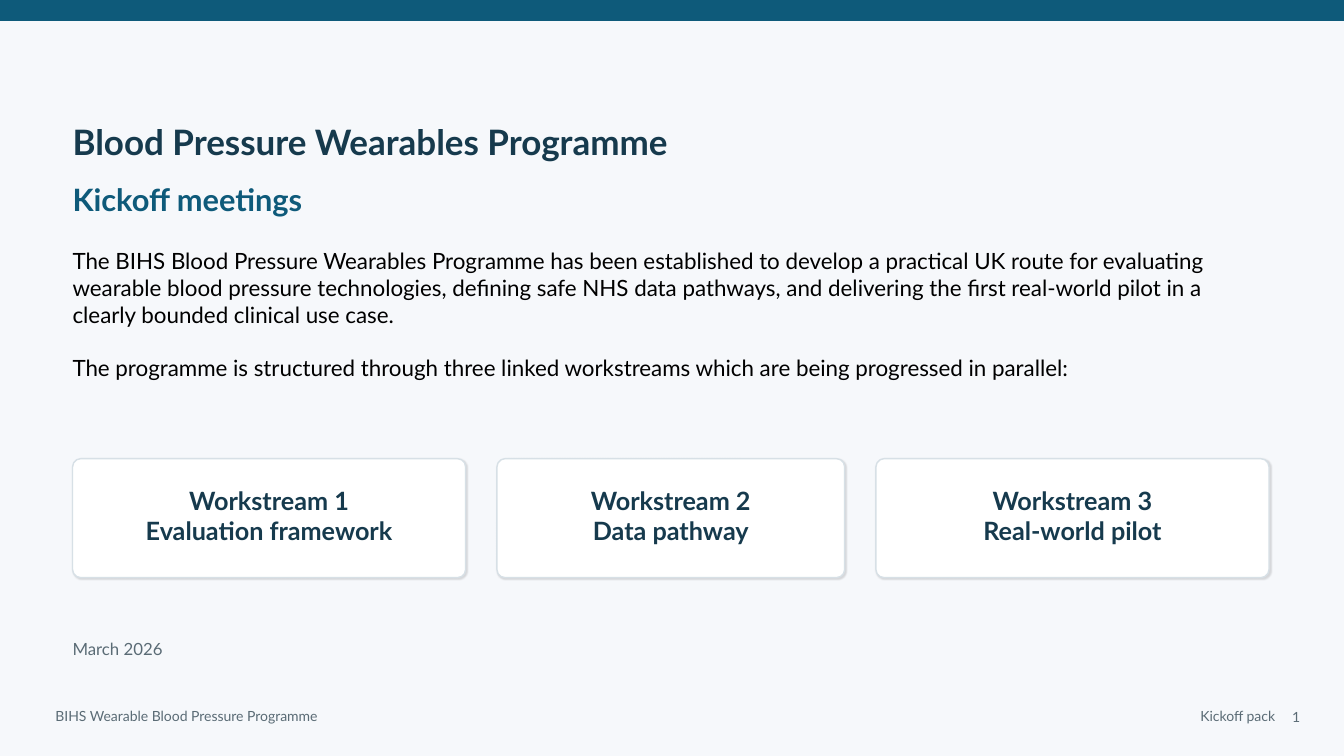
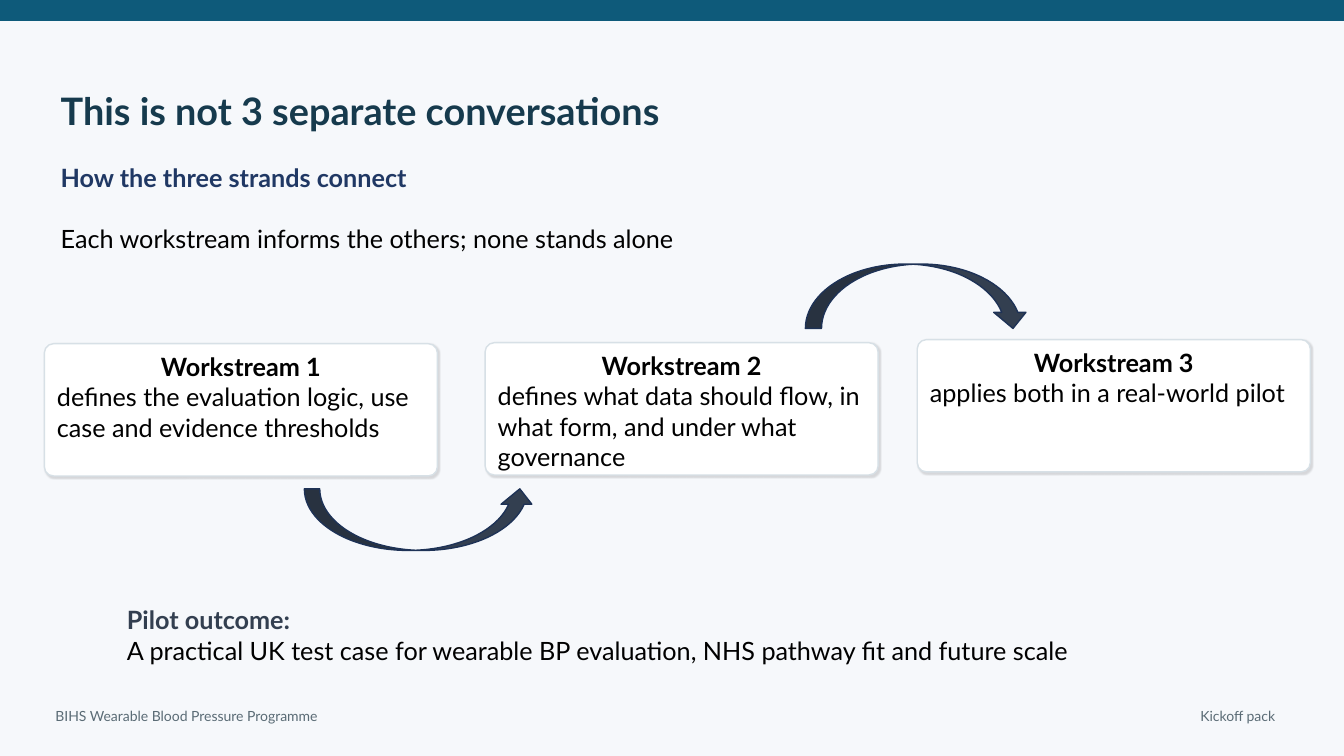
from dataclasses import dataclass

from lxml.etree import SubElement
from pptx import Presentation
from pptx.dml.color import RGBColor
from pptx.enum.shapes import MSO_SHAPE
from pptx.enum.text import MSO_ANCHOR, PP_ALIGN
from pptx.oxml.ns import qn
from pptx.shapes.autoshape import Shape
from pptx.slide import Slide
from pptx.text.text import TextFrame
from pptx.util import Pt

FONT = "Lato"
PAPER = RGBColor(0xF6, 0xF8, 0xFB)
TEAL = RGBColor(0x0E, 0x5A, 0x7A)
NAVY = RGBColor(0x16, 0x3A, 0x4D)
BLUE = RGBColor(0x20, 0x38, 0x64)
SLATE = RGBColor(0x33, 0x3F, 0x50)
EDGE = RGBColor(0x1E, 0x32, 0x56)
GREY = RGBColor(0x5A, 0x6B, 0x75)
RULE = RGBColor(0xD7, 0xE0, 0xE6)
WHITE = RGBColor(0xFF, 0xFF, 0xFF)
BLACK = RGBColor(0, 0, 0)


@dataclass(frozen=True)
class Box:
    x: float
    y: float
    w: float
    h: float


@dataclass(frozen=True)
class Card:
    box: Box
    title: str
    body: str


def write(frame: TextFrame, text: str, *, size: float = 18,
          color: RGBColor = BLACK, bold: bool = False,
          align: PP_ALIGN = PP_ALIGN.LEFT, before: float = 0) -> None:
    para = frame.paragraphs[0] if not frame.text else frame.add_paragraph()
    para.alignment = align
    if before:
        para.space_before = Pt(before)
    run = para.add_run()
    run.text = text
    run.font.name = FONT
    run.font.size = Pt(size)
    run.font.bold = bold
    run.font.color.rgb = color


def inset(frame: TextFrame, side: float, top: float, base: float,
          anchor: MSO_ANCHOR) -> None:
    frame.word_wrap = True
    frame.margin_left = frame.margin_right = Pt(side)
    frame.margin_top, frame.margin_bottom = Pt(top), Pt(base)
    frame.vertical_anchor = anchor


def area(slide: Slide, box: Box,
         anchor: MSO_ANCHOR = MSO_ANCHOR.MIDDLE) -> TextFrame:
    frame = slide.shapes.add_textbox(
        Pt(box.x), Pt(box.y), Pt(box.w), Pt(box.h)).text_frame
    inset(frame, 0, 0, 0, anchor)
    return frame


def draw(slide: Slide, kind: MSO_SHAPE, box: Box, fill: RGBColor,
         line: RGBColor) -> Shape:
    shape = slide.shapes.add_shape(
        kind, Pt(box.x), Pt(box.y), Pt(box.w), Pt(box.h))
    shape.shadow.inherit = False
    shape.fill.solid()
    shape.fill.fore_color.rgb = fill
    shape.line.color.rgb = line
    shape.line.width = Pt(1)
    return shape


def panel(slide: Slide, box: Box) -> TextFrame:
    shape = draw(slide, MSO_SHAPE.ROUNDED_RECTANGLE, box, WHITE, RULE)
    shape.adjustments[0] = 0.07
    effects = shape._element.spPr.find(qn("a:effectLst"))
    shadow = SubElement(effects, qn("a:outerShdw"), blurRad=str(Pt(1)),
                        dist=str(Pt(1.2)), dir="2700000", algn="ctr",
                        rotWithShape="0")
    black = SubElement(shadow, qn("a:srgbClr"), val="000000")
    SubElement(black, qn("a:alpha"), val="12000")
    return shape.text_frame


def base(deck: Presentation) -> Slide:
    slide = deck.slides.add_slide(deck.slide_layouts[6])
    slide.background.fill.solid()
    slide.background.fill.fore_color.rgb = PAPER
    draw(slide, MSO_SHAPE.RECTANGLE, Box(0, 0, 960, 14.4), TEAL, TEAL)
    write(area(slide, Box(39.6, 504, 331.2, 14.4)),
          "BIHS Wearable Blood Pressure Programme", size=10, color=GREY)
    write(area(slide, Box(799.2, 504, 111.6, 14.4)), "Kickoff pack",
          size=10, color=GREY, align=PP_ALIGN.RIGHT)
    return slide


def cover(deck: Presentation) -> None:
    slide = base(deck)
    left, width = 51.84, 854.64
    write(area(slide, Box(left, 85, 532.8, 32.4)),
          "Blood Pressure Wearables Programme", size=25, color=NAVY, bold=True)
    write(area(slide, Box(left, 128.2, 259.2, 28.8)), "Kickoff meetings",
          size=22, color=TEAL, bold=True)
    intro = area(slide, Box(left, 176.5, width, 96), MSO_ANCHOR.TOP)
    write(intro, "The BIHS Blood Pressure Wearables Programme has been "
          "established to develop a practical UK route for evaluating "
          "wearable blood pressure technologies, defining safe NHS data "
          "pathways, and delivering the first real-world pilot in a clearly "
          "bounded clinical use case.", size=16)
    write(intro, "The programme is structured through three linked "
          "workstreams which are being progressed in parallel:",
          size=16, before=19.2)
    names = ("Evaluation framework", "Data pathway", "Real-world pilot")
    spans = (280.8, 248.4, 280.8)
    gap = (width - sum(spans)) / 2
    x = left
    for num, (name, span) in enumerate(zip(names, spans), 1):
        frame = panel(slide, Box(x, 327.6, span, 85))
        inset(frame, 7.2, 0, 4.3, MSO_ANCHOR.MIDDLE)
        for text in (f"Workstream {num}", name):
            write(frame, text, color=NAVY, bold=True, align=PP_ALIGN.CENTER)
        x += span + gap
    write(area(slide, Box(left, 456.5, 100.8, 14.4)), "March 2026",
          size=12, color=GREY)
    write(area(slide, Box(900, 505, 28.8, 14.4)), "1",
          size=10, color=GREY, align=PP_ALIGN.RIGHT)


def links(deck: Presentation) -> None:
    slide = base(deck)
    left = 43.4
    write(area(slide, Box(left, 59, 490, 40)),
          "This is not 3 separate conversations",
          size=27, color=NAVY, bold=True)
    intro = area(slide, Box(left, 116, 706, 65), MSO_ANCHOR.TOP)
    write(intro, "How the three strands connect", color=BLUE, bold=True)
    write(intro, "Each workstream informs the others; none stands alone",
          before=21.6)
    wide, high = 280.8, 94.5
    cards = (
        Card(Box(31.7, 245.5, wide, high), "Workstream 1",
             "defines the evaluation logic, use case and evidence thresholds"),
        Card(Box(346.5, 244.8, wide, high), "Workstream 2",
             "defines what data should flow, in what form, "
             "and under what governance"),
        Card(Box(655.2, 242.6, wide, high), "Workstream 3",
             "applies both in a real-world pilot"),
    )
    for card in cards:
        frame = panel(slide, card.box)
        inset(frame, 7.2, 3.6, 3.6, MSO_ANCHOR.TOP)
        write(frame, card.title, bold=True, align=PP_ALIGN.CENTER)
        write(frame, card.body)
    draw(slide, MSO_SHAPE.CURVED_UP_ARROW, Box(217.4, 349.2, 164.9, 44),
         SLATE, EDGE)
    draw(slide, MSO_SHAPE.CURVED_DOWN_ARROW, Box(575.3, 188.6, 159.8, 46),
         SLATE, EDGE)
    result = area(slide, Box(90.7, 432, 789, 44), MSO_ANCHOR.TOP)
    write(result, "Pilot outcome:", color=SLATE, bold=True)
    write(result, "A practical UK test case for wearable BP evaluation, "
          "NHS pathway fit and future scale")


def main() -> None:
    deck = Presentation()
    deck.slide_width, deck.slide_height = Pt(960), Pt(540)
    cover(deck)
    links(deck)
    deck.save("out.pptx")


if __name__ == "__main__":
    main()
